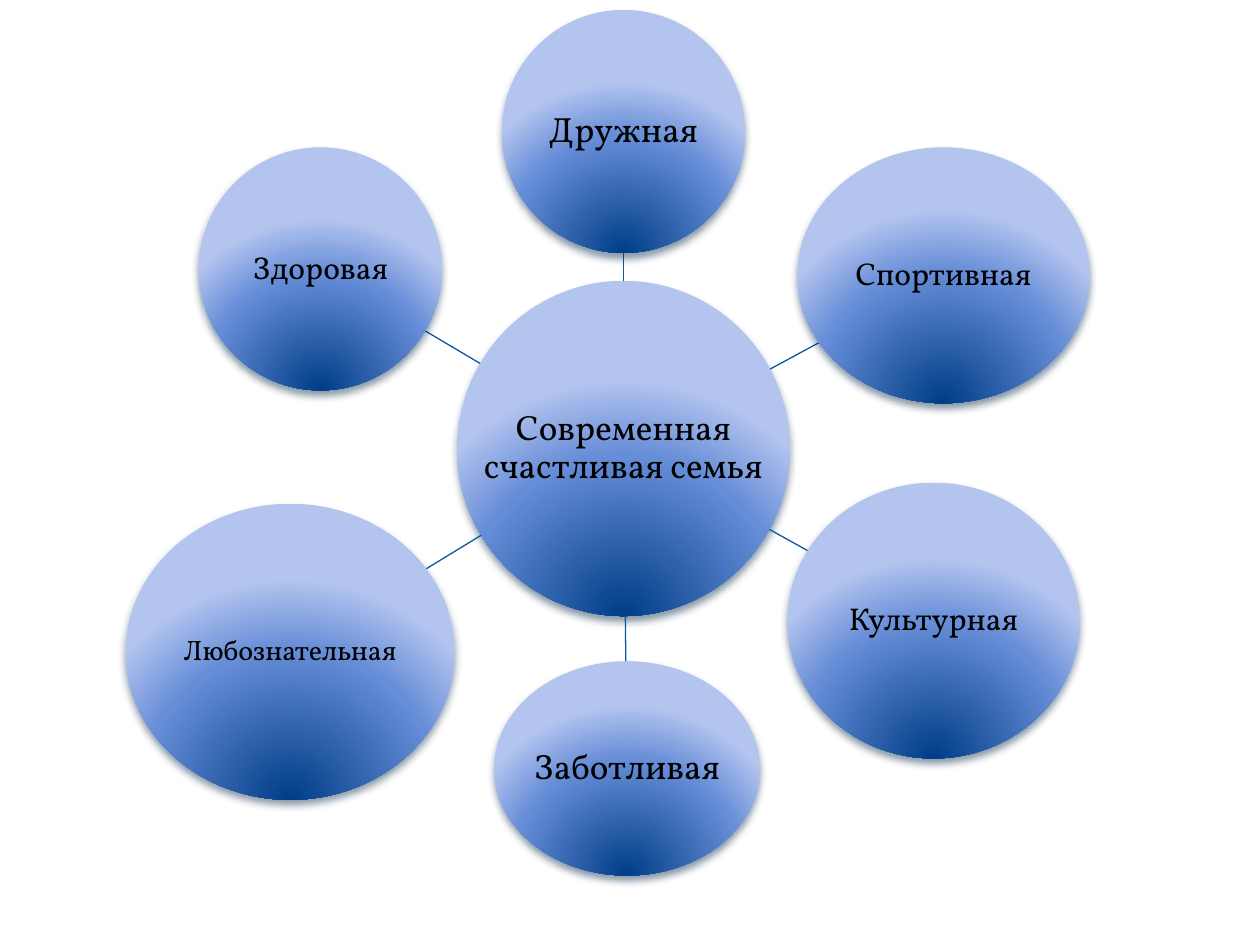
from dataclasses import dataclass
from math import hypot

from pptx import Presentation
from pptx.dml.color import RGBColor
from pptx.enum.shapes import MSO_CONNECTOR, MSO_SHAPE
from pptx.enum.text import MSO_ANCHOR, PP_ALIGN
from pptx.oxml import parse_xml
from pptx.oxml.ns import nsdecls, qn
from pptx.shapes.autoshape import Shape
from pptx.slide import Slide
from pptx.util import Cm, Pt


@dataclass(frozen=True)
class Theme:
    font: str = "Vollkorn"
    text: str = "000000"
    line: str = "0C599F"
    line_width: float = 0.75
    shadow: str = "042747"
    gradient: tuple[tuple[int, str], ...] = (
        (0, "003D87"), (68, "668DD7"), (100, "B3C4EF"))
    large: int = 20
    medium: int = 18
    small: int = 16


@dataclass(frozen=True)
class Bubble:
    """An ellipse given by its centre and size in centimetres."""
    label: str
    x: float
    y: float
    width: float
    height: float
    size: int

    def edge_towards(self, other: "Bubble") -> tuple[float, float]:
        """Where the line to the other bubble's centre leaves this ellipse."""
        dx, dy = other.x - self.x, other.y - self.y
        reach = hypot(dx / (self.width / 2), dy / (self.height / 2))
        return self.x + dx / reach, self.y + dy / reach


THEME = Theme()
FAMILY = Bubble("Современная\vсчастливая семья", 12.57, 9.04, 6.71, 6.76, THEME.large)
QUALITIES = [
    Bubble("Дружная", 12.57, 2.65, 4.9, 4.9, THEME.large),
    Bubble("Спортивная", 19.02, 5.55, 5.89, 5.16, THEME.medium),
    Bubble("Культурная", 18.82, 12.51, 5.89, 5.56, THEME.medium),
    Bubble("Заботливая", 12.64, 15.49, 5.36, 4.32, THEME.large),
    Bubble("Любознательная", 5.85, 13.14, 6.63, 5.97, THEME.small),
    Bubble("Здоровая", 6.46, 5.42, 4.9, 4.9, THEME.medium),
]


def style_surface(shape: Shape) -> None:
    """Give the shape a radial gradient and a soft shadow, without outline."""
    stops = "".join(
        f'<a:gs pos="{position * 1000}"><a:srgbClr val="{color}"/></a:gs>'
        for position, color in THEME.gradient)
    properties = shape._element.spPr
    properties.find(qn("a:prstGeom")).addnext(parse_xml(
        f'<a:gradFill {nsdecls("a")} rotWithShape="1"><a:gsLst>{stops}</a:gsLst>'
        '<a:path path="circle">'
        '<a:fillToRect l="50000" t="130000" r="50000" b="-30000"/>'
        '</a:path></a:gradFill>'))
    shape.line.fill.background()
    shape.shadow.inherit = False
    properties.find(qn("a:effectLst")).append(parse_xml(
        f'<a:outerShdw {nsdecls("a")} blurRad="{Pt(4.5)}" dist="{Pt(3)}" '
        f'dir="5400000" rotWithShape="0"><a:srgbClr val="{THEME.shadow}">'
        '<a:alpha val="48000"/></a:srgbClr></a:outerShdw>'))


def draw_bubble(page: Slide, bubble: Bubble) -> None:
    shape = page.shapes.add_shape(
        MSO_SHAPE.OVAL,
        Cm(bubble.x - bubble.width / 2), Cm(bubble.y - bubble.height / 2),
        Cm(bubble.width), Cm(bubble.height))
    style_surface(shape)
    frame = shape.text_frame
    frame.word_wrap = False
    frame.vertical_anchor = MSO_ANCHOR.MIDDLE
    frame.margin_left = frame.margin_right = Cm(0.03)
    frame.margin_top = frame.margin_bottom = Cm(0.03)
    para = frame.paragraphs[0]
    para.text = bubble.label
    para.alignment = PP_ALIGN.CENTER
    para.line_spacing = 0.9
    for span in para.runs:
        span.font.name = THEME.font
        span.font.size = Pt(bubble.size)
        span.font.color.rgb = RGBColor.from_string(THEME.text)


def draw_link(page: Slide, start: Bubble, end: Bubble) -> None:
    points = (*start.edge_towards(end), *end.edge_towards(start))
    link = page.shapes.add_connector(
        MSO_CONNECTOR.STRAIGHT, *(Cm(value) for value in points))
    link.line.color.rgb = RGBColor.from_string(THEME.line)
    link.line.width = Pt(THEME.line_width)
    link._element.spPr.append(parse_xml(f'<a:effectLst {nsdecls("a")}/>'))


def main() -> None:
    deck = Presentation()
    deck.slide_width, deck.slide_height = Cm(25.4), Cm(19.05)
    page = deck.slides.add_slide(deck.slide_layouts[6])
    draw_bubble(page, FAMILY)
    for quality in QUALITIES:
        draw_link(page, FAMILY, quality)
        draw_bubble(page, quality)
    deck.save("out.pptx")


if __name__ == "__main__":
    main()
